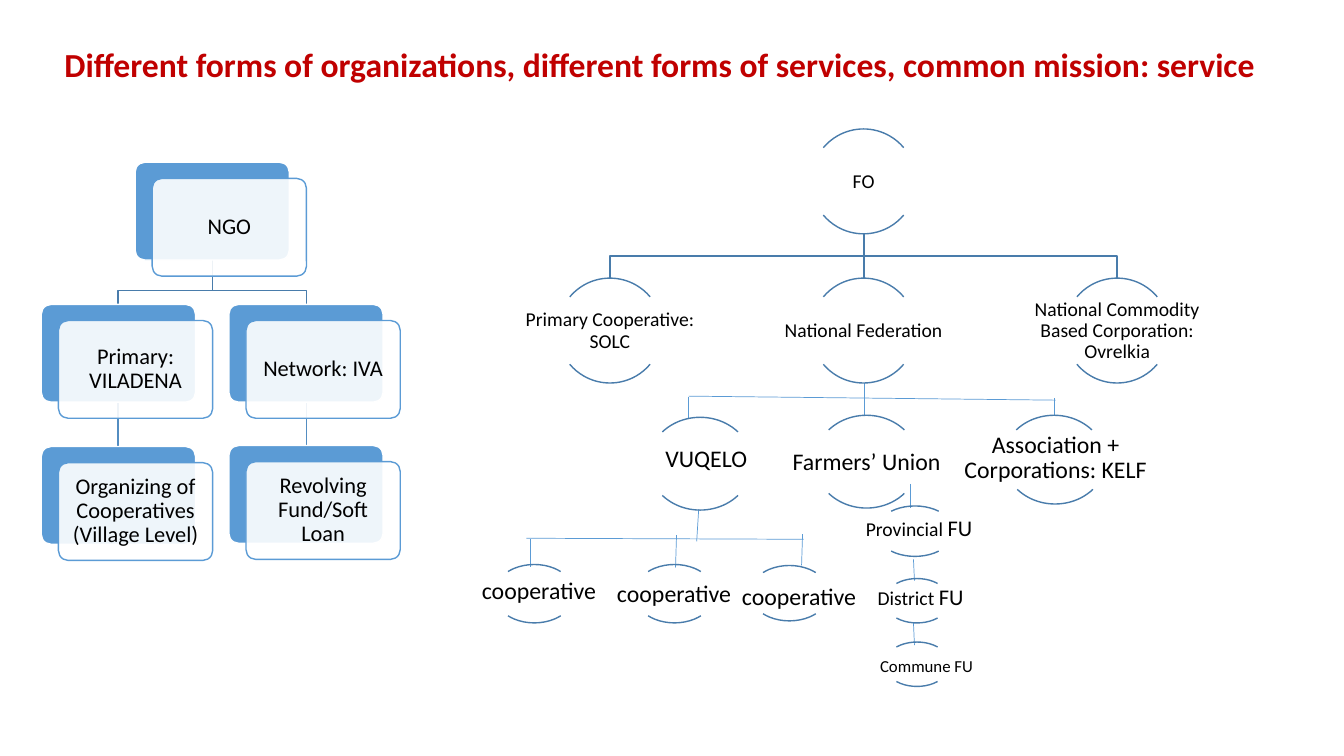
"""Build the slide that charts NGO and farmer organization structures."""
from typing import NamedTuple

import pptx
import pptx.dml.color
import pptx.enum.shapes
import pptx.enum.text
import pptx.oxml.ns
import pptx.util
from lxml import etree

Inches = pptx.util.Inches
RGBColor = pptx.dml.color.RGBColor
MSO_SHAPE = pptx.enum.shapes.MSO_SHAPE
Point = tuple[float, float]

RED = RGBColor(0xC0, 0x00, 0x00)
BLACK = RGBColor(0x00, 0x00, 0x00)
WHITE = RGBColor(0xFF, 0xFF, 0xFF)
BLUE = RGBColor(0x5B, 0x9B, 0xD5)
STEEL = RGBColor(0x49, 0x7C, 0xAB)
MID_BLUE = RGBColor(0x53, 0x8D, 0xC1)

CARD_W, CARD_H = 1.53, 0.97
TOP_ARC, BOTTOM_ARC = (132, 192), (24, 84)
RING = 1.04
FO_X, FO_STEP, FO_Y, BRANCH_Y = 5.53, 2.515, 1.28, 2.76


class Card(NamedTuple):
    x: float
    y: float
    text: str


class Ring(NamedTuple):
    box: tuple[float, float, float, float]
    label: tuple[float, float, float, float]
    text: str
    size: float = 17
    tail: str = ""
    bottom_dx: float = 0
    bottom_dy: float = 0


class Link(NamedTuple):
    start: Point
    end: Point
    color: RGBColor = BLUE
    width: float = 0.5


def fo_ring(column: int, y: float, text: str) -> Ring:
    x = FO_X + FO_STEP * column
    return Ring((x, y, RING, RING), (x - 0.52, y + 0.19, 2 * RING, 0.67), text, 14)


CARDS = [
    Card(1.34, 1.61, "NGO"),
    Card(0.41, 3.02, "Primary: VILADENA"),
    Card(0.41, 4.43, "Organizing of Cooperatives (Village Level)"),
    Card(2.27, 3.02, "Network: IVA"),
    Card(2.27, 4.42, "Revolving Fund/Soft Loan"),
]
ELBOWS = [
    [(2.11, 2.57), (2.11, 2.88), (3.04, 2.88), (3.04, 3.02)],
    [(2.11, 2.57), (2.11, 2.88), (1.17, 2.88), (1.17, 3.02)],
    [(8.57, 2.32), (8.57, 2.54), (11.08, 2.54), (11.08, 2.76)],
    [(8.57, 2.32), (8.57, 2.54), (6.05, 2.54), (6.05, 2.76)],
]
LINKS = [
    Link((3.04, 3.99), (3.04, 4.42), MID_BLUE, 1),
    Link((1.17, 3.99), (1.17, 4.43), MID_BLUE, 1),
    Link((8.57, 2.32), (8.57, 2.76), STEEL, 1),
    Link((6.83, 3.93), (10.47, 3.97)),
    Link((6.83, 3.94), (6.83, 4.16)),
    Link((8.57, 3.8), (8.57, 4.12)),
    Link((10.46, 3.95), (10.46, 4.12)),
    Link((5.22, 5.34), (7.97, 5.35)),
    Link((6.93, 5.05), (6.91, 5.37)),
    Link((6.71, 5.31), (6.7, 5.63)),
    Link((7.96, 5.3), (7.95, 5.61)),
    Link((5.26, 5.35), (5.26, 5.63)),
    Link((9.03, 4.8), (9.03, 5.04)),
    Link((9.06, 5.55), (9.07, 5.76)),
    Link((9.06, 6.18), (9.07, 6.4)),
]
RINGS = [
    fo_ring(1, FO_Y, "FO"),
    fo_ring(0, BRANCH_Y, "Primary Cooperative: SOLC"),
    fo_ring(1, BRANCH_Y, "National Federation"),
    fo_ring(2, BRANCH_Y, "National Commodity Based Corporation: Ovrelkia"),
    Ring((6.43, 4.14, 1.03, 0.92), (6.24, 4.39, 1.53, 0.34), "VUQELO"),
    Ring((8.08, 4.12, 1.03, 0.92), (7.83, 4.42, 1.53, 0.34), "Farmers’ Union"),
    Ring((9.94, 4.12, 1.03, 0.92), (9.44, 4.25, 2.06, 0.59),
         "Association + Corporations: KELF", bottom_dx=0.01, bottom_dy=-0.04),
    Ring((4.9, 5.6, 0.8, 0.58), (4.75, 5.76, 1.19, 0.22), "cooperative"),
    Ring((6.29, 5.6, 0.8, 0.58), (6.09, 5.79, 1.19, 0.22), "cooperative"),
    Ring((7.43, 5.61, 0.8, 0.58), (7.16, 5.76, 1.53, 0.34), "cooperative",
         bottom_dy=-0.03),
    Ring((8.69, 5.02, 0.77, 0.5), (8.54, 5.17, 1.15, 0.17), "Provincial ", 14, "FU"),
    Ring((8.77, 5.74, 0.65, 0.44), (8.65, 5.86, 0.96, 0.16), "District ", 14, "FU"),
    Ring((8.77, 6.37, 0.65, 0.44), (8.59, 6.55, 1.2, 0.14), "Commune FU", 12),
]


def write(sp, text: str, *, size: float, color: RGBColor = BLACK, bold: bool = False,
          margin: float = 0.1, tail: str = "", tail_size: float = 16) -> None:
    tf = sp.text_frame
    tf.word_wrap = True
    tf.auto_size = pptx.enum.text.MSO_AUTO_SIZE.NONE
    tf.vertical_anchor = pptx.enum.text.MSO_ANCHOR.MIDDLE
    tf.margin_left = tf.margin_right = tf.margin_top = tf.margin_bottom = Inches(margin)
    p = tf.paragraphs[0]
    p.alignment = pptx.enum.text.PP_ALIGN.CENTER
    p.line_spacing = 0.9
    for part, part_size in ((text, size), (tail, tail_size)):
        if part:
            r = p.add_run()
            r.text = part
            r.font.name = "Calibri"
            r.font.size = pptx.util.Pt(part_size)
            r.font.bold = bold
            r.font.color.rgb = color


def outline(sp, color: RGBColor, width: float = 1) -> None:
    sp.line.color.rgb = color
    sp.line.width = pptx.util.Pt(width)


def draw_link(shapes, link: Link) -> None:
    ends = [Inches(v) for v in (*link.start, *link.end)]
    cxn = shapes.add_connector(pptx.enum.shapes.MSO_CONNECTOR.STRAIGHT, *ends)
    outline(cxn, link.color, link.width)
    etree.SubElement(cxn._element.spPr, pptx.oxml.ns.qn("a:effectLst"))


def draw_elbow(shapes, points: list[Point]) -> None:
    start, *rest = [(Inches(x), Inches(y)) for x, y in points]
    builder = shapes.build_freeform(*start)
    builder.add_line_segments(rest, close=False)
    sp = builder.convert_to_shape()
    sp.shadow.inherit = False
    sp.fill.background()
    outline(sp, STEEL)


def draw_panel(shapes, x: float, y: float, fill: RGBColor, line: RGBColor):
    sp = shapes.add_shape(MSO_SHAPE.ROUNDED_RECTANGLE, Inches(x), Inches(y),
                          Inches(CARD_W), Inches(CARD_H))
    sp.adjustments[0] = 0.1
    sp.shadow.inherit = False
    sp.fill.solid()
    sp.fill.fore_color.rgb = fill
    outline(sp, line)
    return sp


def draw_card(shapes, card: Card) -> None:
    draw_panel(shapes, card.x, card.y, BLUE, WHITE)
    front = draw_panel(shapes, card.x + 0.17, card.y + 0.16, WHITE, BLUE)
    color = front._element.spPr.find(pptx.oxml.ns.qn("a:solidFill"))[0]
    etree.SubElement(color, pptx.oxml.ns.qn("a:alpha"), val="90000")
    write(front, card.text, size=16)


def draw_ring(shapes, ring: Ring) -> None:
    x, y, w, h = ring.box
    for angles, dx, dy in ((TOP_ARC, 0, 0), (BOTTOM_ARC, ring.bottom_dx, ring.bottom_dy)):
        sp = shapes.add_shape(MSO_SHAPE.ARC, Inches(x + dx), Inches(y + dy),
                              Inches(w), Inches(h))
        sp.adjustments[0], sp.adjustments[1] = angles
        sp.shadow.inherit = False
        sp.fill.background()
        outline(sp, STEEL)
    label = shapes.add_textbox(*[Inches(v) for v in ring.label])
    write(label, ring.text, size=ring.size, margin=0.01, tail=ring.tail)


def main() -> None:
    prs = pptx.Presentation()
    prs.slide_width, prs.slide_height = Inches(13.33), Inches(7.5)
    shapes = prs.slides.add_slide(prs.slide_layouts[5]).shapes
    title = shapes.title
    title.left, title.top = Inches(0.43), Inches(0.41)
    title.width, title.height = Inches(12.23), Inches(0.5)
    write(title, "Different forms of organizations, different forms of services, "
          "common mission: service", size=24, color=RED, bold=True, margin=0.05)
    for points in ELBOWS:
        draw_elbow(shapes, points)
    for link in LINKS:
        draw_link(shapes, link)
    for card in CARDS:
        draw_card(shapes, card)
    for ring in RINGS:
        draw_ring(shapes, ring)
    prs.save("out.pptx")


if __name__ == "__main__":
    main()
